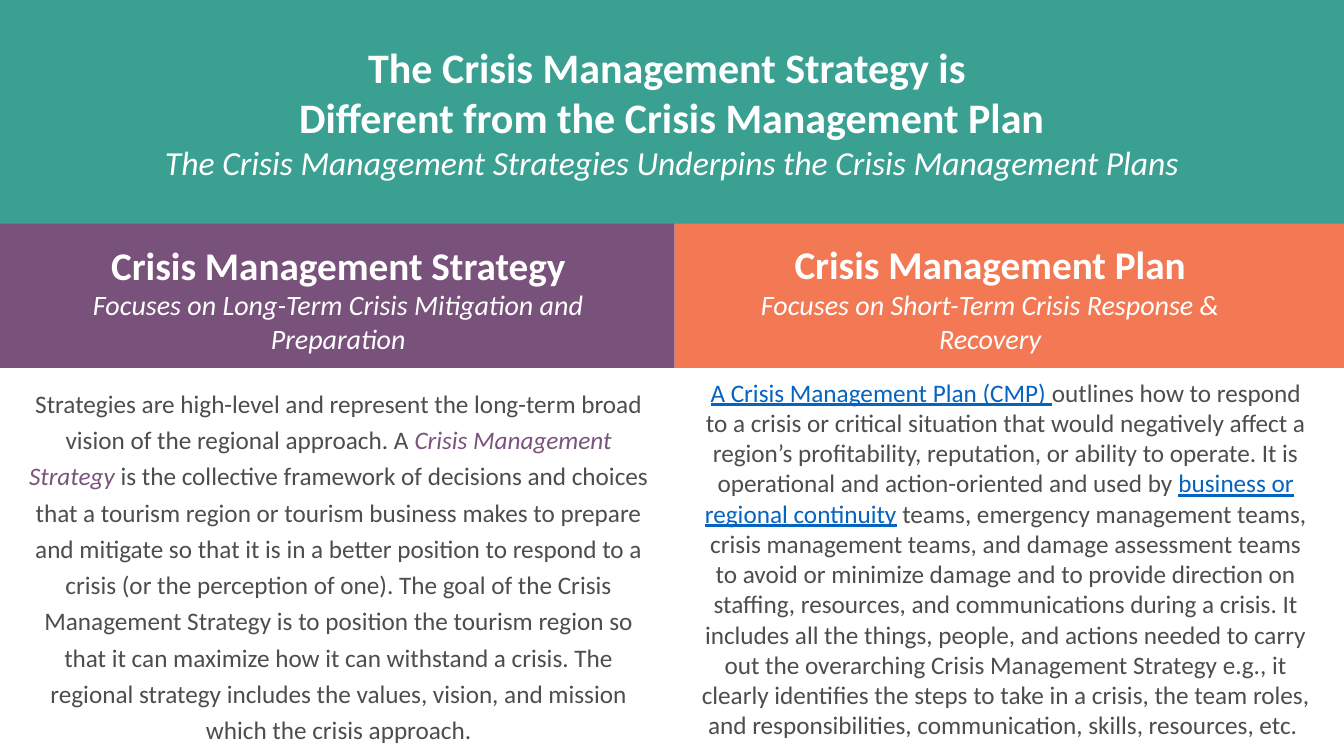
import pptx
import pptx.dml.color
import pptx.enum.shapes
import pptx.enum.text
import pptx.util

Inches = pptx.util.Inches
ANCHOR = pptx.enum.text.MSO_ANCHOR

WHITE, GREY, BLUE = "FFFFFF", "4D4D4D", "0563C1"
TEAL, PURPLE, ORANGE = "3AA091", "79527B", "F27954"

BODY = {"size": 18, "color": GREY}
TERM = {"size": 18, "color": "7A547C", "italic": True}
REFERENCE = {"size": 18, "color": BLUE, "underline": True}
TITLE = {"size": 30, "color": WHITE, "bold": True}
SUBTITLE = {"size": 24, "color": WHITE, "italic": True}
HEADING = {"size": 28, "color": WHITE, "bold": True}
FOCUS = {"size": 20, "color": WHITE, "italic": True}

PANELS = [
    (0, 0.53, 6.69, 3.12, PURPLE),
    (6.69, 0.53, 6.64, 3.12, ORANGE),
    (0, 0, 13.33, 2.22, TEAL),
]

TEXTS = [
    ((0, 0, 13.33, 2.22), ANCHOR.MIDDLE, 1.0, [
        [("The Crisis Management Strategy is ", TITLE)],
        [("Different from the Crisis Management Plan", TITLE)],
        [("The Crisis Management Strategies Underpins the Crisis Management Plans", SUBTITLE)],
    ]),
    ((0.4, 2.34, 5.91, 0.64), ANCHOR.TOP, 1.0, [
        [("Crisis Management Strategy", HEADING)],
        [("Focuses on Long-Term Crisis Mitigation and Preparation", FOCUS)],
    ]),
    ((7.11, 2.34, 5.42, 1.23), ANCHOR.MIDDLE, 1.0, [
        [("Crisis Management Plan", HEADING)],
        [("Focuses on Short-Term Crisis Response & Recovery", FOCUS)],
    ]),
    ((0.13, 3.74, 6.46, 3.75), ANCHOR.TOP, 1.2, [[
        ("Strategies are high-level and represent the long-term broad vision of the "
         "regional approach. A ", BODY),
        ("Crisis Management Strategy ", TERM),
        ("is the collective framework of decisions and choices that a tourism region or "
         "tourism business makes to prepare and mitigate so that it is in a better position "
         "to respond to a crisis (or the perception of one). The goal of the Crisis "
         "Management Strategy is to position the tourism region so that it can maximize how "
         "it can withstand a crisis. The regional strategy includes the values, vision, and "
         "mission which the crisis approach.", BODY),
    ]]),
    ((6.82, 3.69, 6.31, 1.84), ANCHOR.TOP, 1.0, [[
        ("A Crisis Management Plan (CMP) ", REFERENCE),
        ("outlines how to respond to a crisis or critical situation that would negatively "
         "affect a region’s profitability, reputation, or ability to operate. It is "
         "operational and action-oriented and used by ", BODY),
        ("business or regional continuity", REFERENCE),
        (" teams, emergency management teams, crisis management teams, and damage "
         "assessment teams to avoid or minimize damage and to provide direction on "
         "staffing, resources, and communications during a crisis. It includes all the "
         "things, people, and actions needed to carry out the overarching Crisis Management "
         "Strategy e.g., it clearly identifies the steps to take in a crisis, the team "
         "roles, and responsibilities, communication, skills, resources, etc. ", BODY),
    ]]),
]


def color(value):
    return pptx.dml.color.RGBColor.from_string(value)


def add_panel(slide, left, top, width, height, fill):
    shape = slide.shapes.add_shape(
        pptx.enum.shapes.MSO_SHAPE.RECTANGLE,
        Inches(left), Inches(top), Inches(width), Inches(height))
    shape.shadow.inherit = False
    shape.fill.solid()
    shape.fill.fore_color.rgb = color(fill)
    shape.line.fill.background()


def add_text(slide, box, anchor, line_spacing, paragraphs):
    text_frame = slide.shapes.add_textbox(*map(Inches, box)).text_frame
    text_frame.word_wrap = True
    text_frame.vertical_anchor = anchor
    for index, pieces in enumerate(paragraphs):
        paragraph = text_frame.add_paragraph() if index else text_frame.paragraphs[0]
        paragraph.alignment = pptx.enum.text.PP_ALIGN.CENTER
        paragraph.line_spacing = line_spacing
        for text, style in pieces:
            run = paragraph.add_run()
            run.text = text
            run.font.name = "Calibri"
            run.font.size = pptx.util.Pt(style["size"])
            run.font.color.rgb = color(style["color"])
            run.font.bold = style.get("bold", False)
            run.font.italic = style.get("italic", False)
            run.font.underline = style.get("underline", False)


def main():
    presentation = pptx.Presentation()
    presentation.slide_width = Inches(13.33)
    presentation.slide_height = Inches(7.5)
    slide = presentation.slides.add_slide(presentation.slide_layouts[6])
    for panel in PANELS:
        add_panel(slide, *panel)
    for text in TEXTS:
        add_text(slide, *text)
    presentation.save("out.pptx")


if __name__ == "__main__":
    main()
